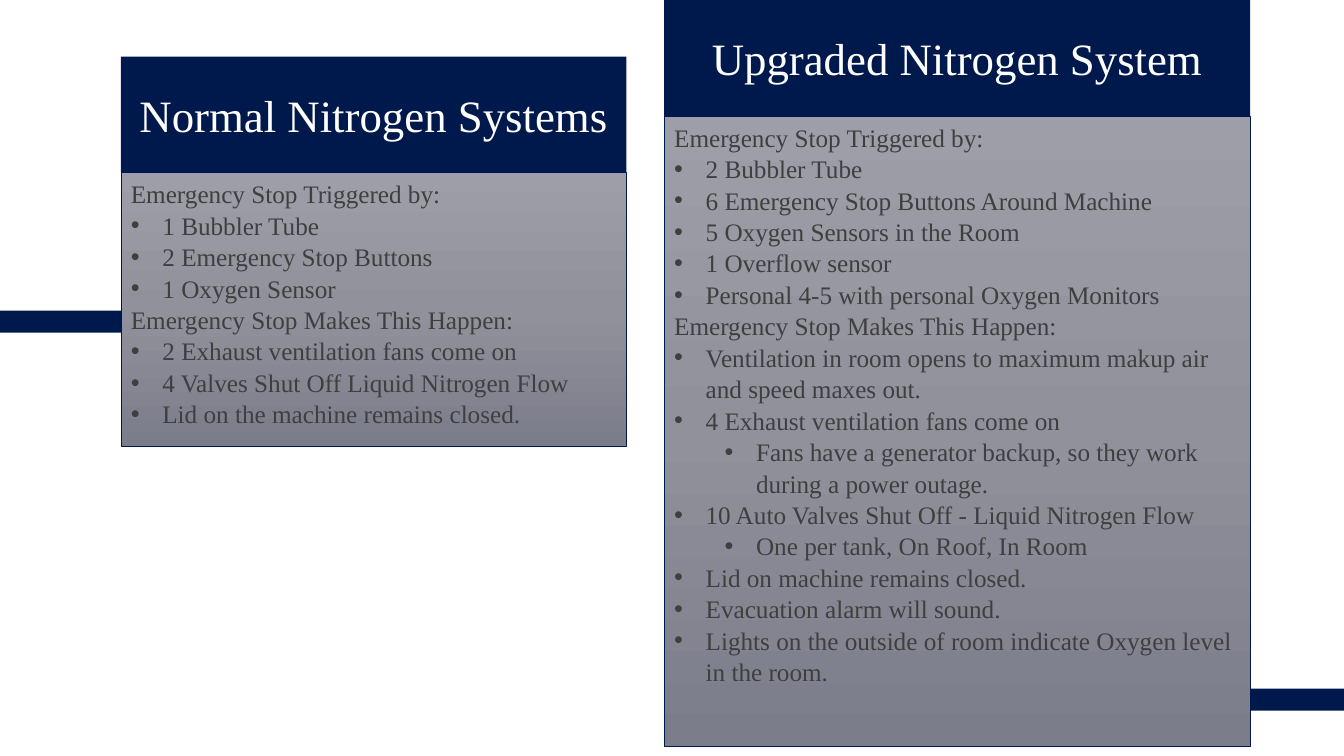
from copy import deepcopy
from lxml import etree
from pptx import Presentation
from pptx.dml.color import RGBColor
from pptx.enum.shapes import MSO_SHAPE as SHAPE
from pptx.enum.text import MSO_ANCHOR as ANCHOR, PP_ALIGN as ALIGN
from pptx.oxml.ns import qn
from pptx.util import Pt

NAVY = RGBColor(0x00, 0x19, 0x4C)
WHITE = RGBColor(0xFF, 0xFF, 0xFF)
GREY = RGBColor(0x3F, 0x3F, 0x3F)
SHADES = [RGBColor(0x9D, 0x9E, 0xA8), RGBColor(0x90, 0x91, 0x9B), RGBColor(0x7C, 0x7D, 0x8B)]
FONT = "Times New Roman"
HEADER_H = 82.8
HANG = 22.5

TRIGGERED = (None, "Emergency Stop Triggered by:")
HAPPENS = (None, "Emergency Stop Makes This Happen:")
COLUMNS = [
    (86.4, 40.4, 361, 196, "Normal Nitrogen Systems", [
        TRIGGERED,
        (0, "1 Bubbler Tube"),
        (0, "2 Emergency Stop Buttons"),
        (0, "1 Oxygen Sensor"),
        HAPPENS,
        (0, "2 Exhaust ventilation fans come on"),
        (0, "4 Valves Shut Off Liquid Nitrogen Flow"),
        (0, "Lid on the machine remains closed."),
    ]),
    (474.5, 0, 418.5, 450, "Upgraded Nitrogen System", [
        TRIGGERED,
        (0, "2 Bubbler Tube"),
        (0, "6 Emergency Stop Buttons Around Machine"),
        (0, "5 Oxygen Sensors in the Room"),
        (0, "1 Overflow sensor"),
        (0, "Personal 4-5 with personal Oxygen Monitors"),
        HAPPENS,
        (0, "Ventilation in room opens to maximum makup air and speed maxes out."),
        (0, "4 Exhaust ventilation fans come on"),
        (1, "Fans have a generator backup, so they work during a power outage."),
        (0, "10 Auto Valves Shut Off - Liquid Nitrogen Flow"),
        (1, "One per tank, On Roof, In Room"),
        (0, "Lid on machine remains closed."),
        (0, "Evacuation alarm will sound."),
        (0, "Lights on the outside of room indicate Oxygen level in the room."),
    ]),
]

prs = Presentation()
prs.slide_width, prs.slide_height = Pt(960), Pt(540)
s = prs.slides.add_slide(prs.slide_layouts[6])


def add_box(x, y, w, h):
    sp = s.shapes.add_shape(SHAPE.RECTANGLE, Pt(x), Pt(y), Pt(w), Pt(h))
    sp.shadow.inherit = False
    sp.fill.solid()
    sp.fill.fore_color.rgb = NAVY
    sp.line.fill.background()
    sp.text_frame.word_wrap = True
    return sp


def add_run(p, text, size, color):
    r = p.add_run()
    r.text = text
    r.font.name = FONT
    r.font.size = Pt(size)
    r.font.color.rgb = color


for x, y, w in [(893.5, 491.8, 66.5), (0, 221.8, 241.2)]:
    add_box(x, y, w, 15.8)

for x, y, w, body_h, title, lines in COLUMNS:
    header = add_box(x, y, w, HEADER_H)
    header.text_frame.vertical_anchor = ANCHOR.MIDDLE
    p = header.text_frame.paragraphs[0]
    p.alignment = ALIGN.CENTER
    add_run(p, title, 32, WHITE)

    body = add_box(x, y + HEADER_H, w, body_h)
    body.line.color.rgb = NAVY
    body.line.width = Pt(0.5)
    body.fill.gradient()
    body.fill.gradient_angle = 270
    stops = body._element.spPr.find(qn("a:gradFill")).find(qn("a:gsLst"))
    stops.append(deepcopy(stops[-1]))
    for i, (stop, shade) in enumerate(zip(body.fill.gradient_stops, SHADES)):
        stop.position = i / 2
        stop.color.rgb = shade

    tf = body.text_frame
    tf.vertical_anchor = ANCHOR.TOP
    for i, (level, text) in enumerate(lines):
        p = tf.add_paragraph() if i else tf.paragraphs[0]
        p.alignment = ALIGN.LEFT
        p.line_spacing = 1.04
        if level is not None:
            p.level = level
            pPr = p._p.get_or_add_pPr()
            pPr.set("marL", str(Pt(HANG + 36 * level)))
            pPr.set("indent", str(-Pt(HANG)))
            etree.SubElement(pPr, qn("a:buFont")).set("typeface", "Arial")
            etree.SubElement(pPr, qn("a:buChar")).set("char", "•")
        add_run(p, text, 18, GREY)

prs.save("out.pptx")
